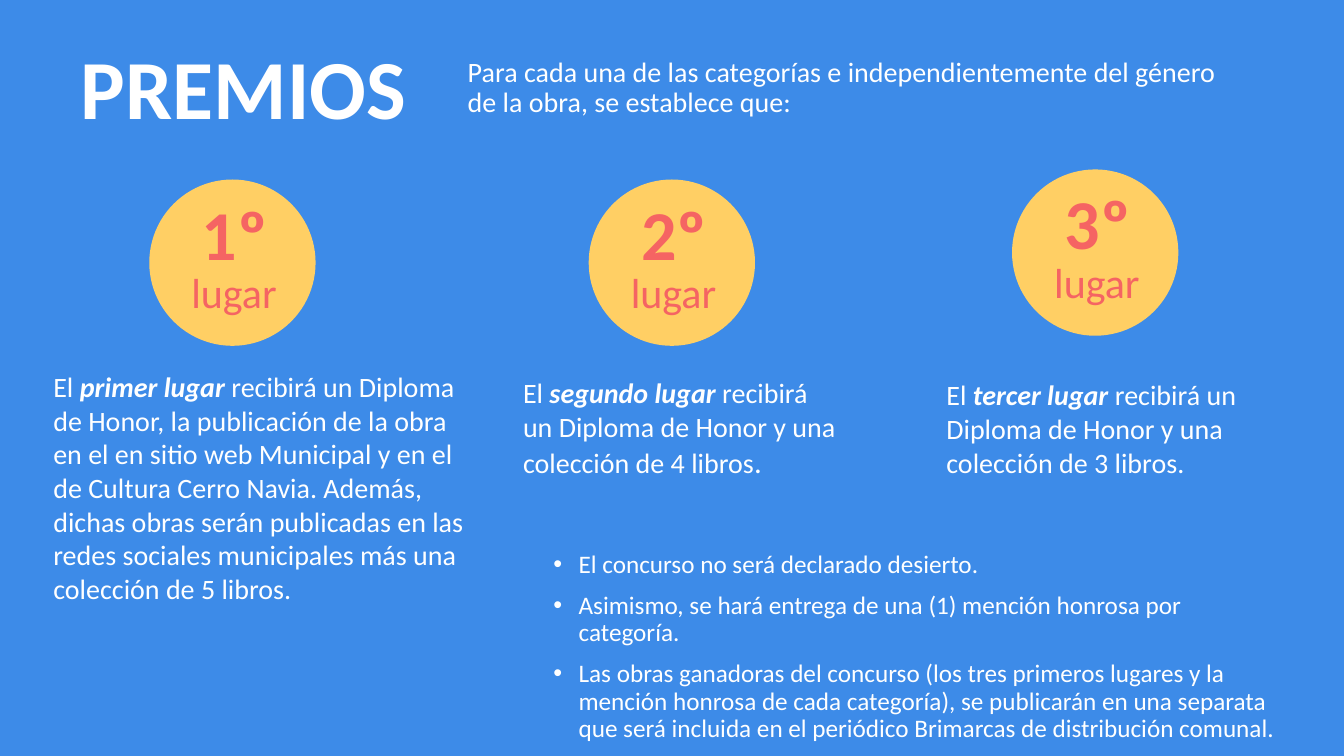
"""Build the prize slide of a literary contest: three places and general rules."""
from lxml.etree import SubElement
from pptx import Presentation
from pptx.dml.color import RGBColor
from pptx.enum.shapes import MSO_SHAPE
from pptx.enum.text import MSO_ANCHOR, MSO_AUTO_SIZE, PP_ALIGN
from pptx.oxml.ns import qn
from pptx.util import Pt

BLUE = RGBColor(0x3D, 0x8B, 0xE8)
YELLOW = RGBColor(0xFF, 0xCF, 0x64)
CORAL = RGBColor(0xF5, 0x64, 0x63)
WHITE = RGBColor(0xFF, 0xFF, 0xFF)
MEDAL_SIZE = 118.8


def write(paragraph, text, *, size, color=WHITE, bold=False, italic=False):
    run = paragraph.add_run()
    run.text = text
    run.font.name = "Calibri"
    run.font.size = Pt(size)
    run.font.color.rgb = color
    run.font.bold = bold
    run.font.italic = italic


def place(shape, left, top, width, height):
    shape.left, shape.top = Pt(left), Pt(top)
    shape.width, shape.height = Pt(width), Pt(height)
    frame = shape.text_frame
    frame.word_wrap = True
    frame.auto_size = MSO_AUTO_SIZE.NONE
    frame.vertical_anchor = MSO_ANCHOR.TOP
    return frame.paragraphs[0]


presentation = Presentation()
presentation.slide_width = Pt(960)
presentation.slide_height = Pt(540)
slide = presentation.slides.add_slide(presentation.slide_layouts[3])
slide.background.fill.solid()
slide.background.fill.fore_color.rgb = BLUE
heading, intro, rules = slide.placeholders

heading_line = place(heading, 44, 21.6, 260, 100.8)
heading_line.alignment = PP_ALIGN.CENTER
write(heading_line, "PREMIOS", size=60, bold=True)

intro_line = place(intro, 326.9, 38.2, 555, 72)
intro_line.line_spacing = 0.9
intro_line.space_before = Pt(10)
intro_format = intro_line._p.get_or_add_pPr()
intro_format.set("marL", "0")
intro_format.set("indent", "0")
SubElement(intro_format, qn("a:buNone"))
write(
    intro_line,
    "Para cada una de las categorías e independientemente del género de la obra, se establece que:",
    size=20,
)

rule_line = place(rules, 388.1, 390.2, 535.7, 149.8)
rule_texts = [
    "El concurso no será declarado desierto.",
    "Asimismo, se hará entrega de una (1) mención honrosa por categoría.",
    "Las obras ganadoras del concurso (los tres primeros lugares y la mención honrosa de cada "
    "categoría), se publicarán en una separata que será incluida en el periódico Brimarcas de "
    "distribución comunal.",
]
for number, rule_text in enumerate(rule_texts):
    if number:
        rule_line = rules.text_frame.add_paragraph()
    rule_line.line_spacing = 0.9
    rule_line.space_before = Pt(10)
    rule_format = rule_line._p.get_or_add_pPr()
    rule_format.set("marL", str(Pt(18)))
    rule_format.set("indent", str(Pt(-18)))
    SubElement(rule_format, qn("a:buFont"), typeface="Arial")
    SubElement(rule_format, qn("a:buChar"), char="•")
    write(rule_line, rule_text, size=18)

prizes = [
    ("1º", (106.6, 128.2), (31, 260.6, 319.7, 203.8), "primer lugar ",
     "recibirá un Diploma de Honor, la publicación de la obra en el en sitio web Municipal y en el "
     "de Cultura Cerro Navia. Además, dichas obras serán publicadas en las redes sociales "
     "municipales más una colección de 5 libros", 20),
    ("2º", (420.5, 128.2), (366.5, 265, 241.2, 108.7), "segundo lugar ",
     "recibirá un Diploma de Honor y una colección de 4 libros", 22),
    ("3º", (722.9, 121), (668.9, 266.4, 241.2, 82.1), "tercer lugar ",
     "recibirá un Diploma de Honor y una colección de 3 libros", 20),
]
for ordinal, (left, top), award_area, winner, award, stop_size in prizes:
    medal = slide.shapes.add_shape(
        MSO_SHAPE.OVAL, Pt(left), Pt(top), Pt(MEDAL_SIZE), Pt(MEDAL_SIZE)
    )
    medal.shadow.inherit = False
    medal.fill.solid()
    medal.fill.fore_color.rgb = YELLOW
    medal.line.fill.background()

    ordinal_box = slide.shapes.add_textbox(0, 0, 0, 0)
    ordinal_line = place(ordinal_box, left + 30.6, top + 4, 86, 66)
    write(ordinal_line, ordinal, size=50, color=CORAL, bold=True)

    label_box = slide.shapes.add_textbox(0, 0, 0, 0)
    label_line = place(label_box, left + 23, top + 58.8, 86.4, 44)
    write(label_line, "lugar", size=30, color=CORAL)

    award_box = slide.shapes.add_textbox(0, 0, 0, 0)
    award_line = place(award_box, *award_area)
    write(award_line, "El ", size=20)
    write(award_line, winner, size=20, bold=True, italic=True)
    write(award_line, award, size=20)
    write(award_line, ".", size=stop_size)

presentation.save("out.pptx")
